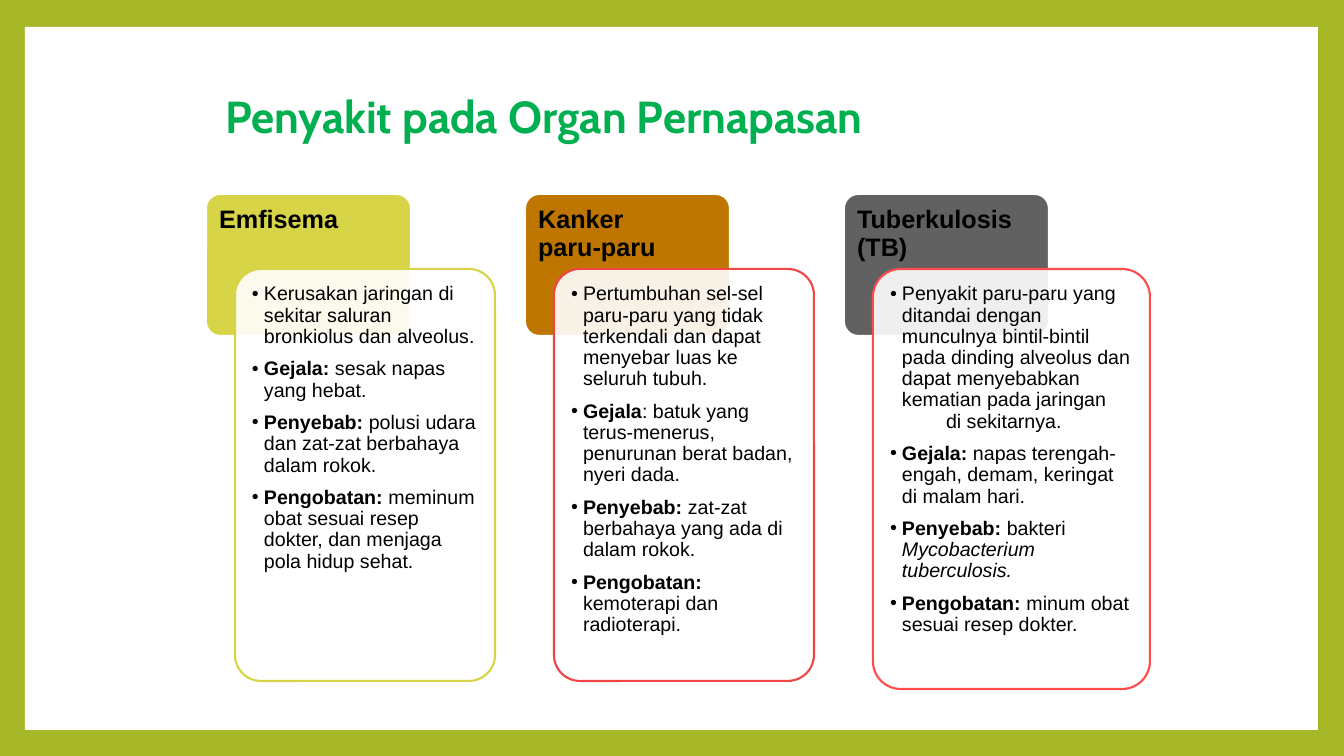
from lxml import etree
from pptx import Presentation, util as u
from pptx.dml.color import RGBColor
from pptx.enum import shapes, text
from pptx.oxml.ns import qn

EMU_PER_PX = 12192000 / 1344
OLIVE = RGBColor(0xA6, 0xB7, 0x27)
LIME = RGBColor(0xD7, 0xD4, 0x47)
BROWN = RGBColor(0xBE, 0x76, 0x00)
GRAY = RGBColor(0x61, 0x61, 0x62)
RED = RGBColor(0xEF, 0x45, 0x45)
CORAL = RGBColor(0xFF, 0x4B, 0x4B)
GREEN = RGBColor(0x00, 0xB0, 0x50)
WHITE = RGBColor(0xFF, 0xFF, 0xFF)
BLACK = RGBColor(0x00, 0x00, 0x00)

COMPARISON_LAYOUT = 4
COLUMN_LEFT, COLUMN_PITCH = 206, 319

DISEASES = [
    ("Emfisema", LIME, LIME, (260, 412), [
        ("", "Kerusakan jaringan di sekitar saluran bronkiolus dan alveolus.", ""),
        ("Gejala: ", "sesak napas yang hebat.", ""),
        ("Penyebab: ", "polusi udara dan zat-zat berbahaya dalam rokok.", ""),
        ("Pengobatan: ", "meminum obat sesuai resep dokter, dan menjaga pola hidup sehat.", ""),
    ]),
    ("Kanker\vparu-paru", BROWN, RED, (260, 412), [
        ("", "Pertumbuhan sel-sel paru-paru yang tidak terkendali dan dapat "
             "menyebar luas ke seluruh tubuh.", ""),
        ("Gejala", ": batuk yang terus-menerus, penurunan berat badan, nyeri dada.", ""),
        ("Penyebab: ", "zat-zat berbahaya yang ada di dalam rokok.", ""),
        ("Pengobatan: ", "kemoterapi dan radioterapi.", ""),
    ]),
    ("Tuberkulosis (TB)", GRAY, CORAL, (277, 420), [
        ("", "Penyakit paru-paru yang ditandai dengan munculnya bintil-bintil pada dinding "
             "alveolus dan dapat menyebabkan kematian pada jaringan\v\tdi sekitarnya.", ""),
        ("Gejala: ", "napas terengah-engah, demam, keringat di malam hari.", ""),
        ("Penyebab: ", "bakteri ", "Mycobacterium tuberculosis."),
        ("Pengobatan: ", "minum obat sesuai resep dokter.", ""),
    ]),
]


def px(length):
    return u.Emu(round(length * EMU_PER_PX))


class DiseaseSlide:
    heading_font = "Cabin"
    text_font = "Arial"

    def __init__(self, deck):
        self.slide = deck.slides.add_slide(deck.slide_layouts[COMPARISON_LAYOUT])
        self.slide.background.fill.solid()
        self.slide.background.fill.fore_color.rgb = OLIVE
        self.bodies = [p for p in self.slide.placeholders if p.placeholder_format.idx in (1, 2, 3, 4)]

    def style(self, paragraph, size, color, name, bold=None):
        font = paragraph.font
        font.size, font.name, font.bold = u.Pt(size), name, bold
        font.color.rgb = color

    def place(self, placeholder, left, top, width, height):
        placeholder.left, placeholder.top = px(left), px(top)
        placeholder.width, placeholder.height = px(width), px(height)
        placeholder.element.getparent().append(placeholder.element)
        return self.frame(placeholder)

    def frame(self, shape, inset=9):
        frame = shape.text_frame
        frame.word_wrap = True
        frame.auto_size = text.MSO_AUTO_SIZE.NONE
        frame.vertical_anchor = text.MSO_ANCHOR.TOP
        frame.margin_left = frame.margin_right = px(inset)
        frame.margin_top = frame.margin_bottom = px(inset)
        return frame

    def panel(self, kind, left, top, width, height, fill, line=None):
        panel = self.slide.shapes.add_shape(kind, px(left), px(top), px(width), px(height))
        panel.shadow.inherit = False
        panel.fill.solid()
        panel.fill.fore_color.rgb = fill
        if line is None:
            panel.line.fill.background()
        else:
            panel.adjustments[0] = 0.1
            panel.line.color.rgb = line
            panel.line.width = u.Pt(1.5)
        return panel

    def title(self, wording):
        frame = self.place(self.slide.shapes.title, 215, 84, 702, 65)
        frame.margin_left, frame.margin_top = px(10), px(5)
        heading = frame.paragraphs[0]
        heading.text = wording
        heading.alignment = text.PP_ALIGN.LEFT
        self.style(heading, 32, GREEN, self.heading_font, True)

    def tab(self, left, name, fill):
        tab = self.panel(shapes.MSO_SHAPE.ROUNDED_RECTANGLE, left, 194, 205, 142, fill, WHITE)
        heading = self.frame(tab).paragraphs[0]
        heading.text = name
        heading.alignment = text.PP_ALIGN.LEFT
        heading.line_spacing = 0.9
        self.style(heading, 18, BLACK, self.text_font, True)

    def card(self, left, width, height, line):
        card = self.panel(shapes.MSO_SHAPE.ROUNDED_RECTANGLE, left, 269, width, height, WHITE, line)
        white = card.element.spPr.find(qn("a:solidFill"))[0]
        etree.SubElement(white, qn("a:alpha"), val="90000")

    def facts(self, left, width, facts):
        frame = self.place(self.bodies.pop(0), left, 275, width, 401)
        for number, fact in enumerate(facts):
            item = frame.add_paragraph() if number else frame.paragraphs[0]
            item.alignment = text.PP_ALIGN.LEFT
            item.line_spacing = 0.9
            item.space_before = u.Pt(6 if number else 0)
            item.space_after = u.Pt(2.1)
            self.bullet(item)
            self.style(item, 14, BLACK, self.text_font)
            for part, bold, italic in zip(fact, (True, False, False), (False, False, True)):
                if part:
                    self.runs(item, part, bold, italic)

    def bullet(self, item):
        props = item._p.get_or_add_pPr()
        props.set("marL", str(px(12)))
        props.set("indent", str(px(-12)))
        etree.SubElement(props, qn("a:buFont"), typeface=self.text_font)
        etree.SubElement(props, qn("a:buChar"), char="•")
        stops = etree.SubElement(props, qn("a:tabLst"))
        etree.SubElement(stops, qn("a:tab"), pos=str(px(56)), algn="l")

    def runs(self, item, part, bold, italic):
        for number, wording in enumerate(part.split("\v")):
            if number:
                item.add_line_break()
                etree.SubElement(item._p[-1], qn("a:rPr"), sz="1400")
            run = item.add_run()
            run.text = wording
            run.font.bold, run.font.italic = bold, italic

    def drop_unused(self):
        for body in self.bodies:
            body.element.getparent().remove(body.element)


def main():
    deck = Presentation()
    deck.slide_width, deck.slide_height = px(1344), px(756)
    page = DiseaseSlide(deck)
    page.panel(shapes.MSO_SHAPE.RECTANGLE, 25, 27, 1293, 703, WHITE)
    page.title("Penyakit pada Organ Pernapasan")
    for column, (name, fill, outline, (width, height), facts) in enumerate(DISEASES):
        left = COLUMN_LEFT + column * COLUMN_PITCH
        page.tab(left, name, fill)
        page.card(left + 29, width, height, outline)
        page.facts(left + 37, width - 15, facts)
    page.drop_unused()
    deck.save("out.pptx")


if __name__ == "__main__":
    main()
